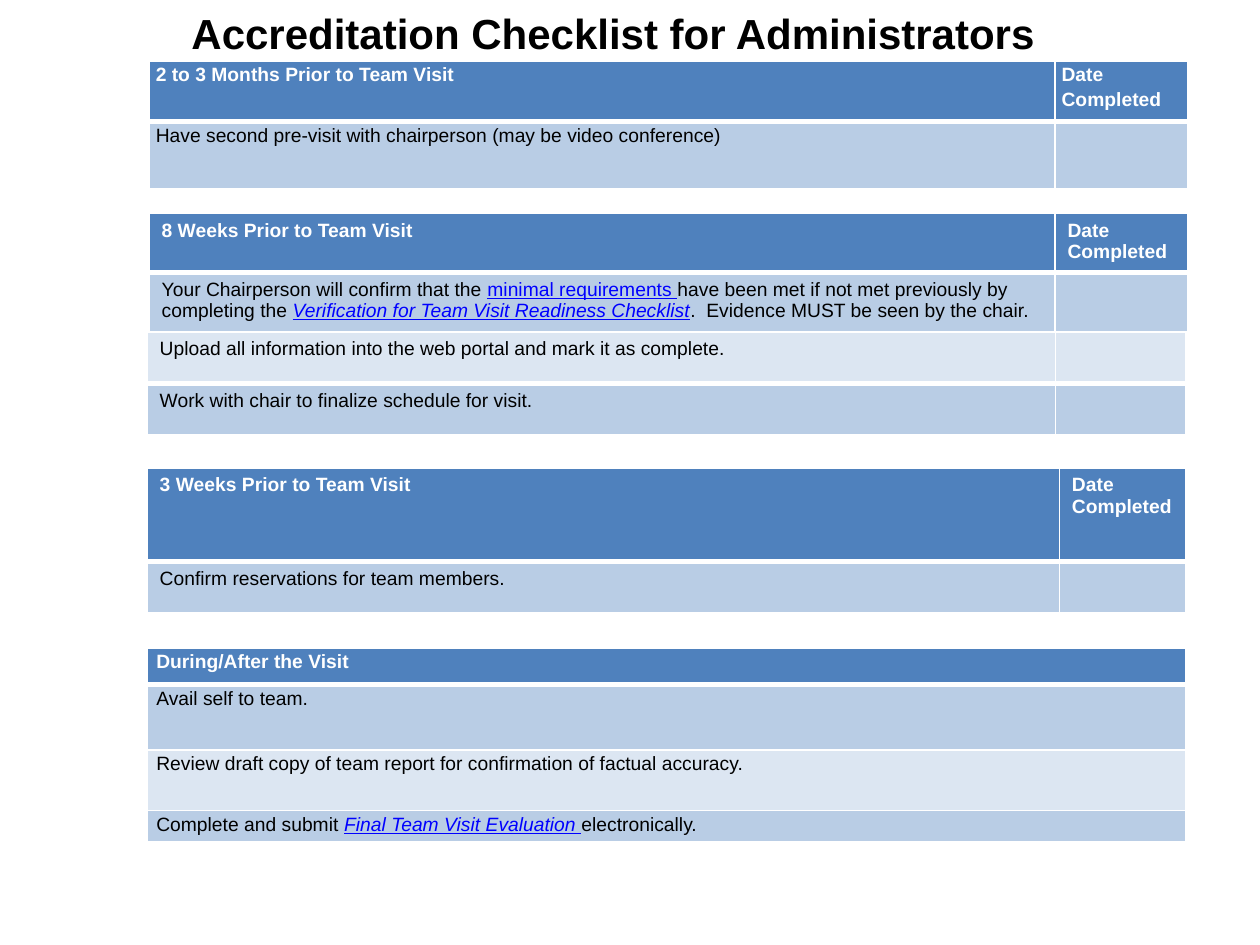
from dataclasses import dataclass

from lxml.etree import SubElement
from pptx import Presentation
from pptx.dml.color import RGBColor
from pptx.enum.text import MSO_ANCHOR
from pptx.oxml.ns import qn
from pptx.util import Cm, Pt

FONT = "Arial"
WHITE, BLACK, LINK_BLUE = "FFFFFF", "000000", "0000FF"
HEADER, DARK_BAND, LIGHT_BAND = "4F81BD", "B9CDE5", "DCE6F2"
THIN, THICK = 1, 3
DATE = "Date Completed"


@dataclass(frozen=True)
class Link:
    text: str
    italic: bool = True


@dataclass(frozen=True)
class Row:
    height: float
    fill: str
    cells: tuple  # each cell is a tuple of strings and Links

    @property
    def is_header(self) -> bool:
        return self.fill == HEADER


@dataclass(frozen=True)
class Checklist:
    """One table; lengths are in centimetres."""
    left: float
    top: float
    widths: tuple
    rows: tuple
    side_margin: float = 0.25
    end_margin: float = 0.13
    line_spacing: float = 1.0


CHECKLISTS = (
    Checklist(3.01, 1.23, (18.26, 2.67), (
        Row(1.22, HEADER, (("2 to 3 Months Prior to Team Visit",), (DATE,))),
        Row(1.35, DARK_BAND, (
            ("Have second pre-visit with chairperson (may be video conference)",), ())),
    ), 0.13, 0, 1.15),
    Checklist(3.01, 4.3, (18.26, 2.67), (
        Row(1.05, HEADER, (("8 Weeks Prior to Team Visit",), (DATE,))),
        Row(1.05, DARK_BAND, ((
            "Your Chairperson will confirm that the ",
            Link("minimal requirements ", italic=False),
            "have been met if not met previously by completing the ",
            Link("Verification for Team Visit Readiness Checklist"),
            ".  Evidence MUST be seen by the chair."), ())),
    )),
    Checklist(2.97, 6.69, (18.31, 2.62), (
        Row(1.04, LIGHT_BAND, (
            ("Upload all information into the web portal and mark it as complete.",), ())),
        Row(1.04, DARK_BAND, (("Work with chair to finalize schedule for visit.",), ())),
    )),
    Checklist(2.97, 9.43, (18.39, 2.54), (
        Row(1.89, HEADER, (("3 Weeks Prior to Team Visit",), (DATE,))),
        Row(1.04, DARK_BAND, (("Confirm reservations for team members.",), ())),
    )),
    Checklist(2.97, 13.07, (20.93,), (
        Row(0.73, HEADER, (("During/After the Visit",),)),
        Row(1.32, DARK_BAND, (("Avail self to team.",),)),
        Row(1.22, LIGHT_BAND, (
            ("Review draft copy of team report for confirmation of factual accuracy.",),)),
        Row(0.62, DARK_BAND, ((
            "Complete and submit ", Link("Final Team Visit Evaluation "),
            "electronically."),)),
    ), 0.18, 0, 1.15),
)


def rgb(value: str) -> RGBColor:
    return RGBColor.from_string(value)


def set_borders(cell, top: int, bottom: int) -> None:
    properties = cell._tc.get_or_add_tcPr()
    for side, width in (("L", THIN), ("R", THIN), ("T", top), ("B", bottom)):
        line = SubElement(properties, qn(f"a:ln{side}"), w=str(Pt(width)))
        fill = SubElement(line, qn("a:solidFill"))
        SubElement(fill, qn("a:srgbClr"), val=WHITE)


def write_cell(cell, content: tuple, row: Row, checklist: Checklist) -> None:
    cell.margin_left = cell.margin_right = Cm(checklist.side_margin)
    cell.margin_top = cell.margin_bottom = Cm(checklist.end_margin)
    cell.vertical_anchor = MSO_ANCHOR.TOP
    paragraph = cell.text_frame.paragraphs[0]
    paragraph.line_spacing = checklist.line_spacing
    paragraph.font.name = FONT
    paragraph.font.size = Pt(11)
    for part in content:
        run = paragraph.add_run()
        run.font.bold = row.is_header
        if isinstance(part, Link):
            run.text = part.text
            run.font.italic = part.italic
            run.font.underline = True
            run.font.color.rgb = rgb(LINK_BLUE)
        else:
            run.text = part
            run.font.color.rgb = rgb(WHITE if row.is_header else BLACK)


def add_checklist(slide, checklist: Checklist) -> None:
    rows, widths = checklist.rows, checklist.widths
    table = slide.shapes.add_table(
        len(rows), len(widths), Cm(checklist.left), Cm(checklist.top),
        Cm(sum(widths)), Cm(sum(row.height for row in rows))).table
    table.first_row = rows[0].is_header
    table.horz_banding = False
    for column, width in zip(table.columns, widths):
        column.width = Cm(width)
    for index, row in enumerate(rows):
        table.rows[index].height = Cm(row.height)
        for column, content in enumerate(row.cells):
            cell = table.cell(index, column)
            set_borders(cell, THICK if index == 1 else THIN,
                        THICK if index == 0 else THIN)
            cell.fill.solid()
            cell.fill.fore_color.rgb = rgb(row.fill)
            write_cell(cell, content, row, checklist)


def add_title(slide, text: str) -> None:
    frame = slide.shapes.add_textbox(Cm(3.61), Cm(0.02), Cm(20.52), Cm(1.73)).text_frame
    frame.word_wrap = True
    heading = frame.paragraphs[0]
    heading.text = text
    heading.font.name = FONT
    heading.font.size = Pt(24)
    heading.font.bold = True
    heading.font.color.rgb = rgb(BLACK)


def main() -> None:
    deck = Presentation()
    deck.slide_width, deck.slide_height = Cm(25.4), Cm(19.05)
    slide = deck.slides.add_slide(deck.slide_layouts[6])
    add_title(slide, "Accreditation Checklist for Administrators")
    for checklist in CHECKLISTS:
        add_checklist(slide, checklist)
    deck.save("out.pptx")


if __name__ == "__main__":
    main()
